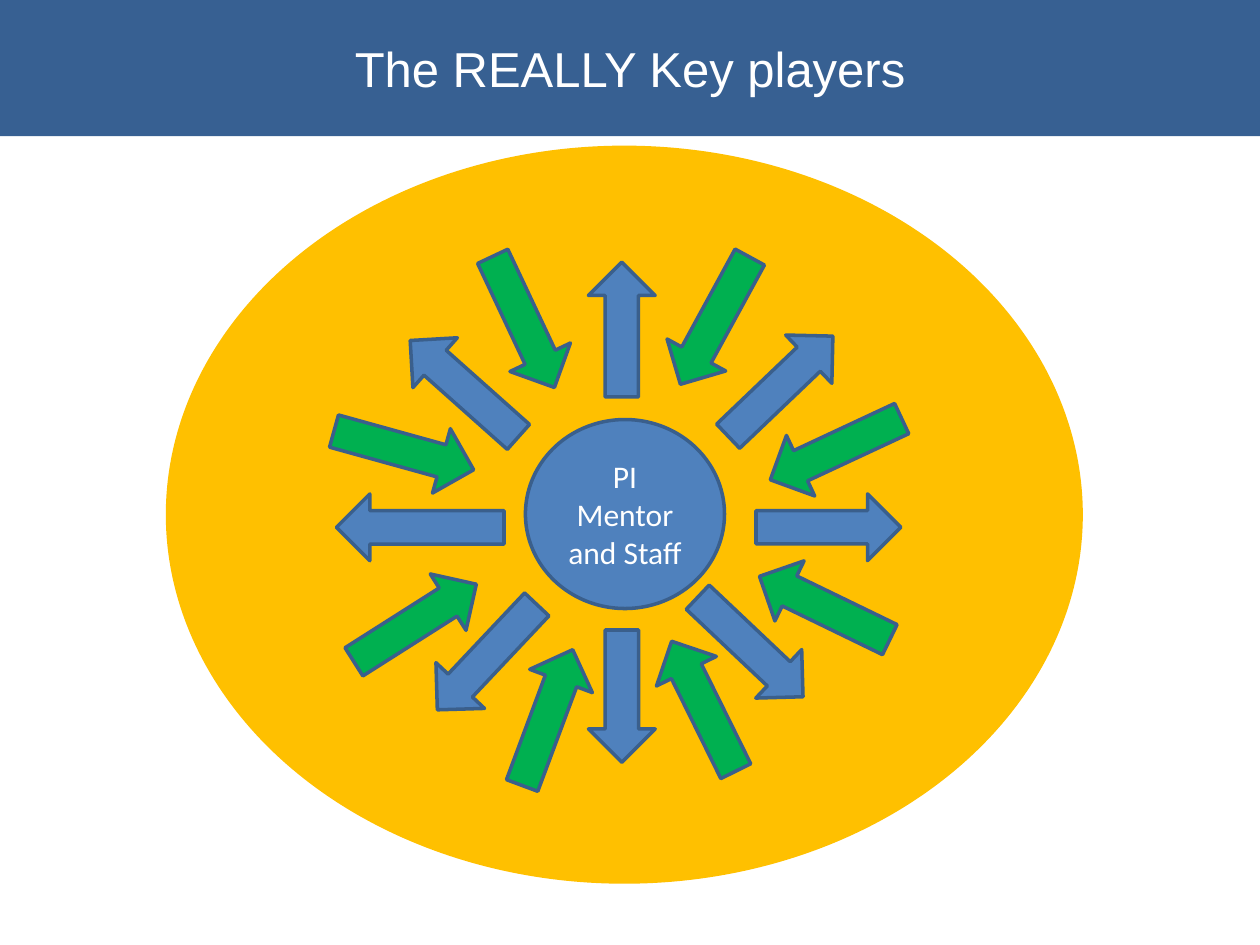
import pptx
import pptx.util
import pptx.dml.color
import pptx.enum.shapes
import pptx.enum.text

Inches = pptx.util.Inches
SHAPE = pptx.enum.shapes.MSO_SHAPE
BLUE, GREEN, GOLD, OUTLINE = "4F81BD", "00B050", "FFC000", "3A5F8C"


def color(hex_string):
    return pptx.dml.color.RGBColor.from_string(hex_string)


def add_figure(kind, left, top, width, height, fill, line):
    figure = slide.shapes.add_shape(
        kind, Inches(left), Inches(top), Inches(width), Inches(height))
    figure.shadow.inherit = False
    figure.fill.solid()
    figure.fill.fore_color.rgb = color(fill)
    figure.line.color.rgb = color(line)
    figure.line.width = pptx.util.Pt(2)
    return figure


presentation = pptx.Presentation()
presentation.slide_width, presentation.slide_height = Inches(10), Inches(7.5)
slide = presentation.slides.add_slide(presentation.slide_layouts[5])

# Title band
title = slide.shapes.title
band = {"left": 0, "top": 0, "width": 10, "height": 1.08}
for name, value in band.items():
    setattr(title, name, Inches(value))
title.fill.solid()
title.fill.fore_color.rgb = color("376092")

# Surrounding field and the core team
add_figure(SHAPE.OVAL, 1.33, 1.17, 7.25, 5.83, GOLD, GOLD)
core_team = add_figure(SHAPE.OVAL, 4.17, 3.33, 1.58, 1.5, BLUE, OUTLINE)

# Wording of the title and the core team
for holder, words, font_format in (
    (title, "The REALLY Key players", {"name": "Arial", "size": pptx.util.Pt(28)}),
    (core_team, "PI Mentor and Staff", {"name": "Calibri", "size": pptx.util.Pt(18)}),
):
    frame = holder.text_frame
    frame.text = words
    frame.word_wrap = True
    frame.vertical_anchor = pptx.enum.text.MSO_ANCHOR.MIDDLE
    paragraph = frame.paragraphs[0]
    paragraph.alignment = pptx.enum.text.PP_ALIGN.CENTER
    font = paragraph.runs[0].font
    for name, value in font_format.items():
        setattr(font, name, value)
    font.color.rgb = color("FFFFFF")

# Arrows: left, top, length, rotation
outward = [
    (6, 3.92, 1.15, 0),
    (4.41, 5.26, 1.05, 90),
    (2.67, 3.92, 1.33, 180),
    (4.4, 2.35, 1.07, 270),
    (5.62, 2.8, 1.15, 316.3),
    (5.38, 4.87, 1.15, 43.4),
    (3.29, 4.95, 1.15, 133.3),
    (3.11, 2.82, 1.15, 221.7),
]
inward = [
    (5.1, 2.28, 1.15, 118.6),
    (6.06, 3.3, 1.15, 155),
    (5.97, 4.56, 1.15, 205.9),
    (5.01, 5.34, 1.15, 243.7),
    (3.77, 5.43, 1.15, 290.4),
    (2.72, 4.68, 1.15, 327.6),
    (2.63, 3.31, 1.15, 15.5),
    (3.58, 2.29, 1.15, 64.8),
]
for arrows, fill in ((outward, BLUE), (inward, GREEN)):
    for left, top, length, rotation in arrows:
        arrow = add_figure(SHAPE.RIGHT_ARROW, left, top, length, 0.53, fill, OUTLINE)
        arrow.rotation = rotation

presentation.save("out.pptx")
